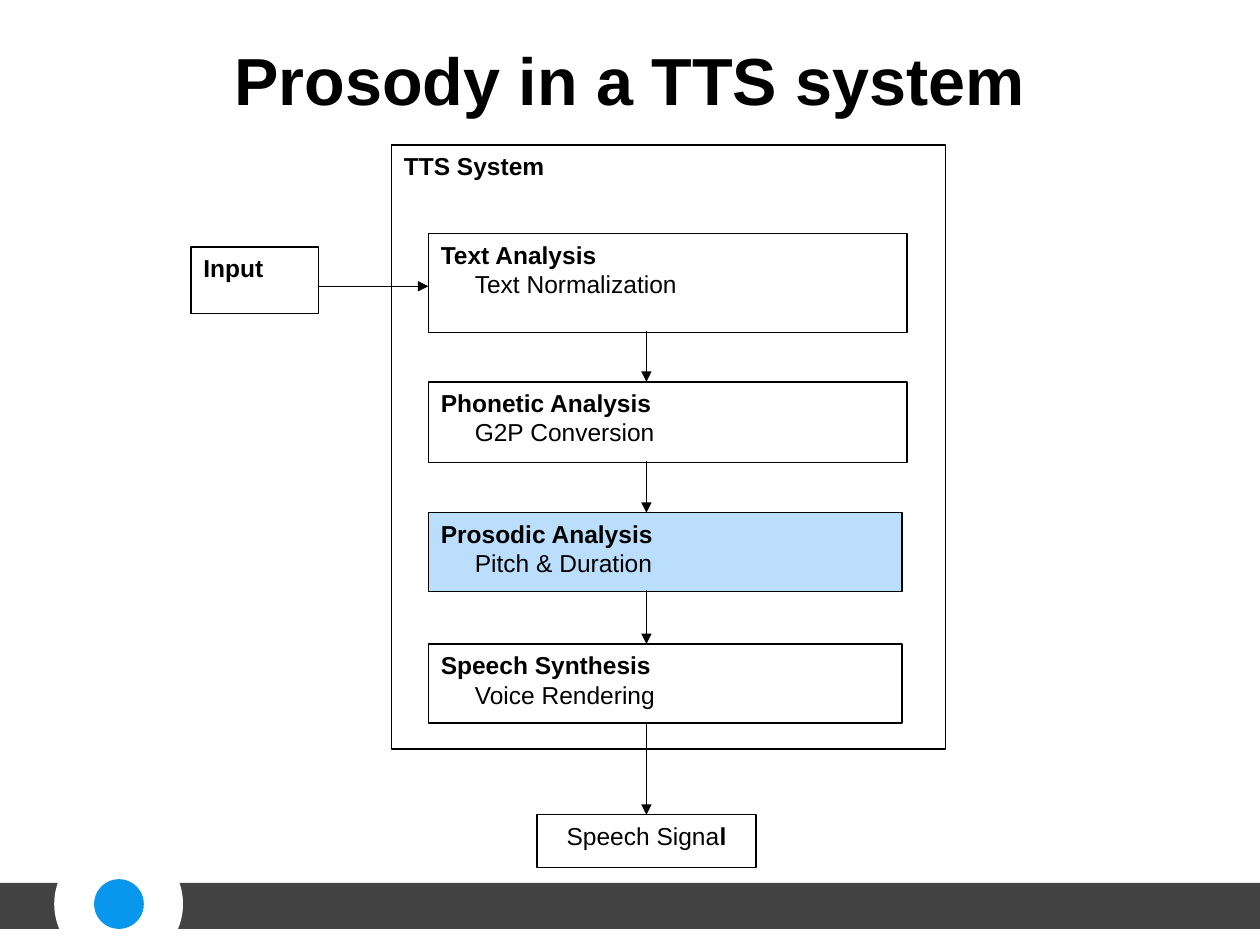
from lxml import etree
from pptx import Presentation
from pptx.dml.color import RGBColor
from pptx.enum import shapes, text
from pptx.oxml.ns import qn
from pptx.util import Pt

COLORS = {
    "ink": "000000",
    "paper": "FFFFFF",
    "bar": "434343",
    "dot": "0996ED",
    "highlight": "5DB2F9",
}
FONT = "Arial"
BODY_SIZE = 14
ARROW_X = 369.4
STAGE_LEFT = 244.8
STAGE_INDENT = 19.45

# heading, detail, top, width, height, fill, opacity in percent
STAGES = [
    ("Text Analysis", "Text Normalization", 133.6, 273.6, 56.5, "paper", 100),
    ("Phonetic Analysis", "G2P Conversion", 218.2, 273.6, 46, None, 100),
    ("Prosodic Analysis", "Pitch & Duration", 293, 270.7, 45.2, "highlight", 42),
    ("Speech Synthesis", "Voice Rendering", 368, 270.7, 45.2, "paper", 100),
]


def rgb(name):
    return RGBColor.from_string(COLORS[name])


def add_run(p, words, size=BODY_SIZE, bold=False):
    r = p.add_run()
    r.text = words
    for key, value in {"name": FONT, "size": Pt(size), "bold": bold}.items():
        setattr(r.font, key, value)
    r.font.color.rgb = rgb("ink")


def add_shape(slide, kind, box, fill=None, outlined=False, opacity=100):
    sp = slide.shapes.add_shape(kind, *(Pt(v) for v in box))
    sp.shadow.inherit = False
    if fill:
        sp.fill.solid()
        sp.fill.fore_color.rgb = rgb(fill)
        if opacity < 100:
            color = sp.fill._xPr.find(".//" + qn("a:srgbClr"))
            etree.SubElement(color, qn("a:alpha"), val=str(opacity * 1000))
    else:
        sp.fill.background()
    if outlined:
        sp.line.color.rgb = rgb("ink")
        sp.line.width = Pt(0.75)
    else:
        sp.line.fill.background()
    return sp


def add_box(slide, box, paragraphs, align=text.PP_ALIGN.LEFT, **style):
    """Outlined rectangle; each paragraph is (indent, [(words, bold), ...])."""
    sp = add_shape(slide, shapes.MSO_SHAPE.RECTANGLE, box, outlined=True, **style)
    tf = sp.text_frame
    tf.word_wrap = True
    tf.vertical_anchor = text.MSO_ANCHOR.TOP
    for i, (indent, runs) in enumerate(paragraphs):
        p = tf.add_paragraph() if i else tf.paragraphs[0]
        p.alignment = align
        if indent:
            p._p.get_or_add_pPr().set("marL", str(Pt(indent)))
        for words, bold in runs:
            add_run(p, words, bold=bold)
    return sp


def add_arrow(slide, x1, y1, x2, y2):
    line = slide.shapes.add_connector(
        shapes.MSO_CONNECTOR.STRAIGHT, Pt(x1), Pt(y1), Pt(x2), Pt(y2))
    line.line.color.rgb = rgb("ink")
    line.line.width = Pt(0.75)
    etree.SubElement(line.line._get_or_add_ln(), qn("a:tailEnd"), type="triangle")
    etree.SubElement(line._element.spPr, qn("a:effectLst"))
    return line


def add_title(slide, words):
    title = slide.shapes.title
    box = {"left": 0, "top": 0, "width": 720, "height": 90}
    for key, value in box.items():
        setattr(title, key, Pt(value))
    tf = title.text_frame
    tf.vertical_anchor = text.MSO_ANCHOR.MIDDLE
    p = tf.paragraphs[0]
    p.alignment = text.PP_ALIGN.CENTER
    add_run(p, words, size=38, bold=True)


def add_footer(slide):
    rect, oval = shapes.MSO_SHAPE.RECTANGLE, shapes.MSO_SHAPE.OVAL
    for kind, box, fill in [
        (rect, (0, 504.6, 36.7, 26.2), "bar"),
        (rect, (99.4, 504.6, 620.6, 26.2), "bar"),
        (oval, (31, 479.8, 73.6, 73.6), "paper"),
        (oval, (53.8, 502.4, 28.4, 28.4), "dot"),
    ]:
        add_shape(slide, kind, box, fill)


def add_stages(slide):
    for heading, detail, top, width, height, fill, opacity in STAGES:
        add_box(slide, (STAGE_LEFT, top, width, height),
                [(0, [(heading, True)]), (STAGE_INDENT, [(detail, False)])],
                fill=fill, opacity=opacity)
    for upper, lower in zip(STAGES, STAGES[1:]):
        add_arrow(slide, ARROW_X, upper[2] + upper[4] - 1, ARROW_X, lower[2])


def main():
    prs = Presentation()
    prs.slide_width, prs.slide_height = Pt(720), Pt(540)
    slide = prs.slides.add_slide(prs.slide_layouts[5])
    add_title(slide, "Prosody in a TTS system")
    add_footer(slide)

    add_box(slide, (223.7, 82.9, 316.5, 345.2), [(0, [("TTS System", True)])])
    add_box(slide, (109.2, 141.1, 72.9, 38), [(0, [("Input", True)])], fill="paper")
    add_stages(slide)
    add_arrow(slide, 182.1, 163.6, STAGE_LEFT, 163.6)

    signal = add_box(slide, (306.8, 465.6, 125.2, 30),
                     [(0, [("Speech Signa", False), ("l", True)])],
                     align=text.PP_ALIGN.CENTER, fill="paper")
    add_arrow(slide, ARROW_X, 413.2, ARROW_X, 465.6).end_connect(signal, 0)
    prs.save("out.pptx")


if __name__ == "__main__":
    main()
